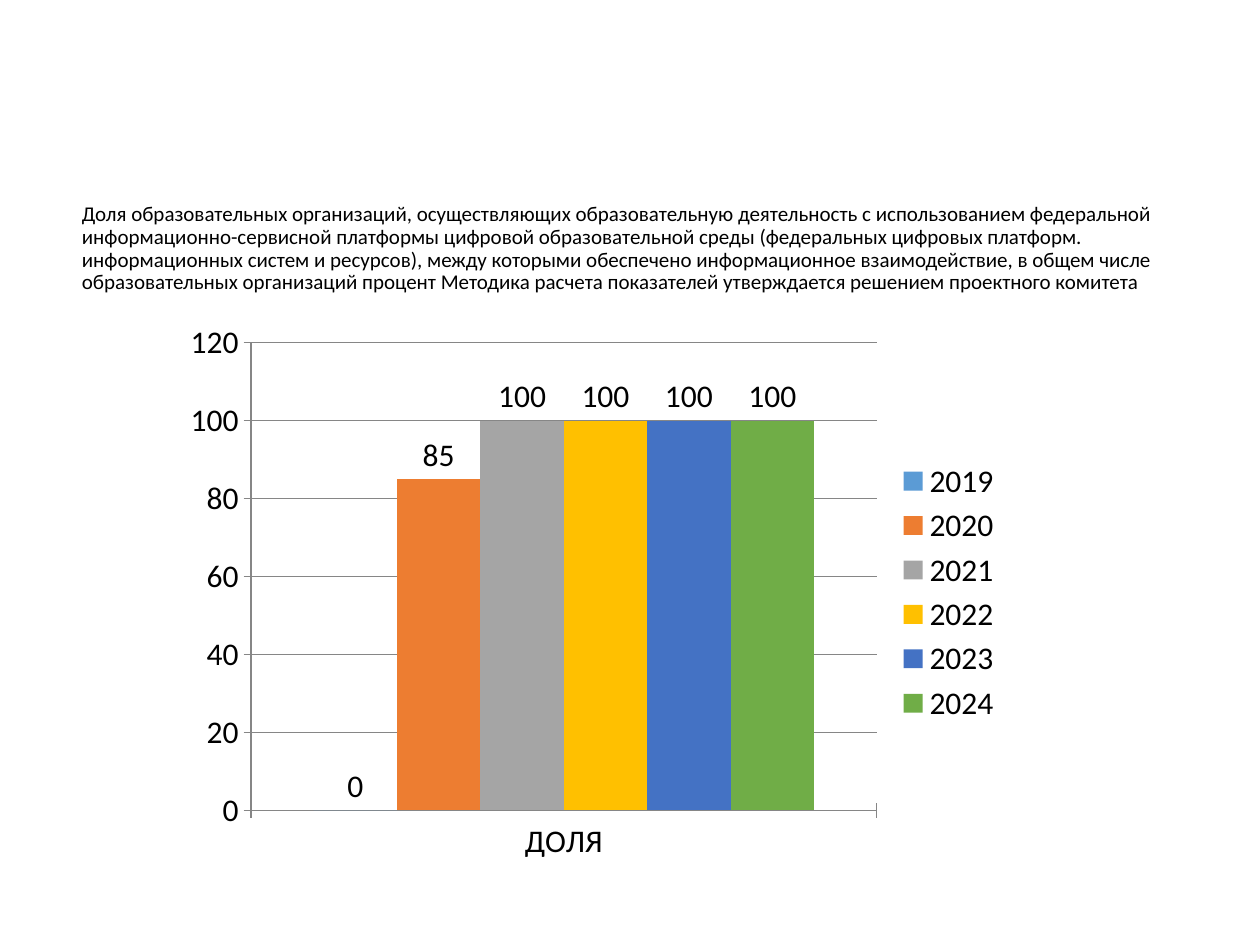
from pptx import Presentation
from pptx.chart.data import CategoryChartData
from pptx.dml.color import RGBColor
from pptx.enum.chart import (XL_CHART_TYPE, XL_LABEL_POSITION,
                             XL_LEGEND_POSITION, XL_TICK_MARK)
from pptx.enum.text import MSO_ANCHOR, PP_ALIGN
from pptx.util import Inches, Pt

COLUMNS = XL_CHART_TYPE.COLUMN_CLUSTERED
OUTSIDE_END = XL_LABEL_POSITION.OUTSIDE_END
RIGHT = XL_LEGEND_POSITION.RIGHT
CROSS = XL_TICK_MARK.CROSS
MIDDLE = MSO_ANCHOR.MIDDLE
LEFT = PP_ALIGN.LEFT

COLORS = {
    "text": "000000", "axis": "868686",
    "2019": "5B9BD5", "2020": "ED7D31", "2021": "A5A5A5",
    "2022": "FFC000", "2023": "4472C4", "2024": "70AD47",
}
SHARES = {"2019": 0, "2020": 85, "2021": 100,
          "2022": 100, "2023": 100, "2024": 100}
TITLE = (
    "Доля образовательных организаций, осуществляющих образовательную "
    "деятельность с использованием федеральной информационно-сервисной "
    "платформы цифровой образовательной среды (федеральных цифровых платформ. "
    "информационных систем и ресурсов), между которыми обеспечено "
    "информационное взаимодействие, в общем числе образовательных организаций "
    "процент Методика расчета показателей утверждается решением проектного "
    "комитета"
)


def color(name):
    return RGBColor.from_string(COLORS[name])


def set_attrs(target, values):
    for name, value in values.items():
        setattr(target, name, value)


class SlideBuilder:
    font_name = "Calibri"

    def __init__(self, prs):
        self.slide = prs.slides.add_slide(prs.slide_layouts[5])

    def format_font(self, font, size):
        set_attrs(font, {"name": self.font_name, "size": Pt(size), "bold": False})
        font.color.rgb = color("text")

    def title(self, text, left, top, width, height, size):
        sp = self.slide.shapes.title
        set_attrs(sp, {"left": Inches(left), "top": Inches(top),
                       "width": Inches(width), "height": Inches(height)})
        tf = sp.text_frame
        set_attrs(tf, {"text": text, "word_wrap": True, "vertical_anchor": MIDDLE})
        p = tf.paragraphs[0]
        set_attrs(p, {"alignment": LEFT, "line_spacing": 0.9})
        self.format_font(p.runs[0].font, size)

    def column_chart(self, category, values, left, top, width, height, size):
        data = CategoryChartData()
        data.categories = [category]
        for name, value in values.items():
            data.add_series(name, [value])
        chart = self.slide.shapes.add_chart(
            COLUMNS, Inches(left), Inches(top), Inches(width), Inches(height),
            data).chart
        set_attrs(chart, {"has_title": False, "has_legend": True})
        self.format_font(chart.font, size)
        set_attrs(chart.legend, {"position": RIGHT, "include_in_layout": False})

        plot = chart.plots[0]
        set_attrs(plot, {"gap_width": 150, "overlap": 0,
                         "vary_by_categories": False})
        for series in plot.series:
            series.invert_if_negative = False
            series.format.fill.solid()
            series.format.fill.fore_color.rgb = color(series.name)
            set_attrs(series.data_labels,
                      {"show_value": True, "position": OUTSIDE_END})

        value_axis = chart.value_axis
        set_attrs(value_axis, {"minimum_scale": 0, "maximum_scale": 120,
                               "major_unit": 20, "has_major_gridlines": True})
        for axis in (chart.category_axis, value_axis):
            axis.major_tick_mark = CROSS
        for part in (chart.category_axis, value_axis, value_axis.major_gridlines):
            part.format.line.color.rgb = color("axis")
            part.format.line.width = Pt(0.75)


def main():
    prs = Presentation()
    set_attrs(prs, {"slide_width": Inches(10), "slide_height": Inches(7.5)})
    s = SlideBuilder(prs)
    s.title(TITLE, 0.55, 1.14, 9.12, 1.67, size=12)
    s.column_chart("ДОЛЯ", SHARES, 1.38, 2.48, 6.67, 4.44, size=18)
    prs.save("out.pptx")


if __name__ == "__main__":
    main()
